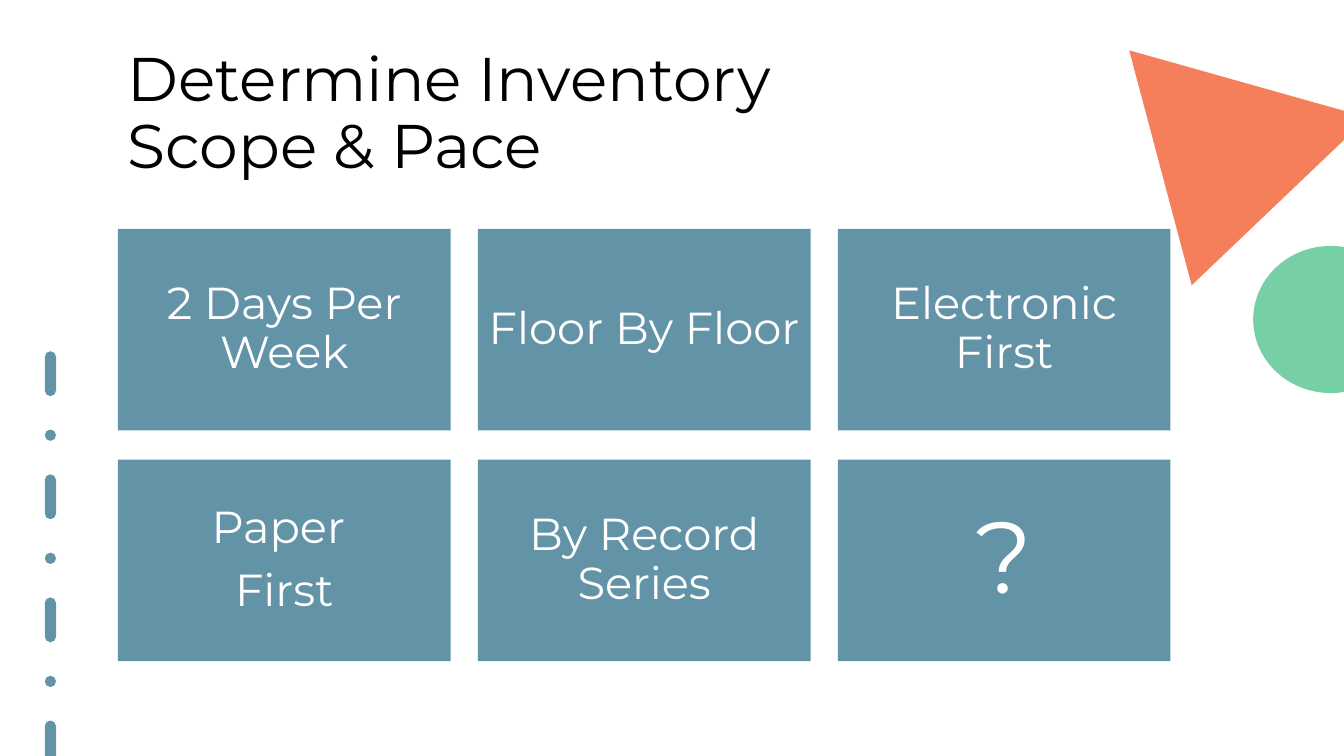
"""Builds the "Determine Inventory Scope & Pace" slide."""
import math

from lxml import etree
from pptx import Presentation
from pptx.dml.color import RGBColor
from pptx.enum.dml import MSO_LINE
from pptx.enum.shapes import MSO_CONNECTOR, MSO_SHAPE
from pptx.enum.text import MSO_ANCHOR, PP_ALIGN
from pptx.oxml.ns import qn
from pptx.util import Inches, Pt

DASH_DOT = MSO_LINE.DASH_DOT
STRAIGHT = MSO_CONNECTOR.STRAIGHT
RECTANGLE = MSO_SHAPE.RECTANGLE
MIDDLE, BOTTOM = MSO_ANCHOR.MIDDLE, MSO_ANCHOR.BOTTOM
CENTER, LEFT = PP_ALIGN.CENTER, PP_ALIGN.LEFT

TEAL = RGBColor(0x3B, 0x78, 0x92)
ORANGE = RGBColor(0xF2, 0x60, 0x31)
GREEN = RGBColor(0x55, 0xC5, 0x8F)
WHITE = RGBColor(0xFF, 0xFF, 0xFF)
BLACK = RGBColor(0x00, 0x00, 0x00)

FONT = "Montserrat"
SLIDE_WIDTH, SLIDE_HEIGHT = 13.33, 7.5
OPTIONS = [
    [("2 Days Per Week", 32), ("Floor By Floor", 32), ("Electronic First", 32)],
    [("Paper \nFirst", 32), ("By Record Series", 32), ("?", 72)],
]
GRID_LEFT, GRID_TOP = 1.17, 2.27
COLUMN_STEP, ROW_STEP = 3.57, 2.29
TRIANGLE = [(11.2, 0.5), (13.33, 1.1), (13.33, 1.39), (11.82, 2.83)]


def make_translucent(properties):
    """Set every solid colour in the properties to 80 % opacity."""
    for color in properties.iter(qn("a:srgbClr")):
        etree.SubElement(color, qn("a:alpha"), val="80000")


def style_shape(shape, color):
    """Give a shape a translucent fill without line or shadow."""
    shape.shadow.inherit = False
    shape.fill.solid()
    shape.fill.fore_color.rgb = color
    shape.line.fill.background()
    make_translucent(shape.fill._xPr)


def write_text(frame, text, size, color, align, anchor):
    """Fill a text frame with one paragraph per line of text."""
    frame.word_wrap = True
    frame.vertical_anchor = anchor
    frame.text = text
    for index, paragraph in enumerate(frame.paragraphs):
        paragraph.alignment = align
        paragraph.line_spacing = 0.9
        paragraph.space_before = Pt(10 if index else 0)
        paragraph.font.name = FONT
        paragraph.font.size = Pt(size)
        paragraph.font.color.rgb = color


def add_outline(slide, points, color):
    """Draw a closed polygon through points given in inches."""
    corners = [(Inches(x), Inches(y)) for x, y in points]
    builder = slide.shapes.build_freeform(*corners[0])
    builder.add_line_segments(corners[1:], close=True)
    style_shape(builder.convert_to_shape(), color)


def circle_points():
    """Return the circle's edge as far as the right side of the slide."""
    angles = [math.radians(degrees) for degrees in range(80, 281, 2)]
    return [(min(SLIDE_WIDTH, 13.2 + 0.77 * math.cos(angle)),
             3.17 + 0.73 * math.sin(angle)) for angle in angles]


def add_dashed_rule(slide):
    """Draw the vertical rule with rounded dashes and dots."""
    rule = slide.shapes.add_connector(
        STRAIGHT, Inches(0.5), Inches(3.54), Inches(0.5), Inches(SLIDE_HEIGHT))
    rule.line.color.rgb = TEAL
    rule.line.width = Pt(8)
    rule.line.dash_style = DASH_DOT
    outline = rule.line._get_or_add_ln()
    outline.set("cap", "rnd")
    make_translucent(outline)
    etree.SubElement(outline.getparent(), qn("a:effectLst"))


def add_title(slide, text):
    """Add the slide title."""
    title = slide.shapes.add_textbox(
        Inches(GRID_LEFT), Inches(0.4), Inches(10.45), Inches(1.45))
    write_text(title.text_frame, text, 44, BLACK, LEFT, BOTTOM)


def add_option(slide, row, column, text, size):
    """Add one option card at its place in the grid."""
    card = slide.shapes.add_shape(
        RECTANGLE, Inches(GRID_LEFT + column * COLUMN_STEP),
        Inches(GRID_TOP + row * ROW_STEP), Inches(3.3), Inches(2))
    style_shape(card, TEAL)
    write_text(card.text_frame, text, size, WHITE, CENTER, MIDDLE)


def main():
    """Build and save the slide."""
    deck = Presentation()
    deck.slide_width = Inches(SLIDE_WIDTH)
    deck.slide_height = Inches(SLIDE_HEIGHT)
    slide = deck.slides.add_slide(deck.slide_layouts[6])
    add_outline(slide, TRIANGLE, ORANGE)
    add_dashed_rule(slide)
    add_outline(slide, circle_points(), GREEN)
    add_title(slide, "Determine Inventory \vScope & Pace")
    for row, options in enumerate(OPTIONS):
        for column, (text, size) in enumerate(options):
            add_option(slide, row, column, text, size)
    deck.save("out.pptx")


if __name__ == "__main__":
    main()
